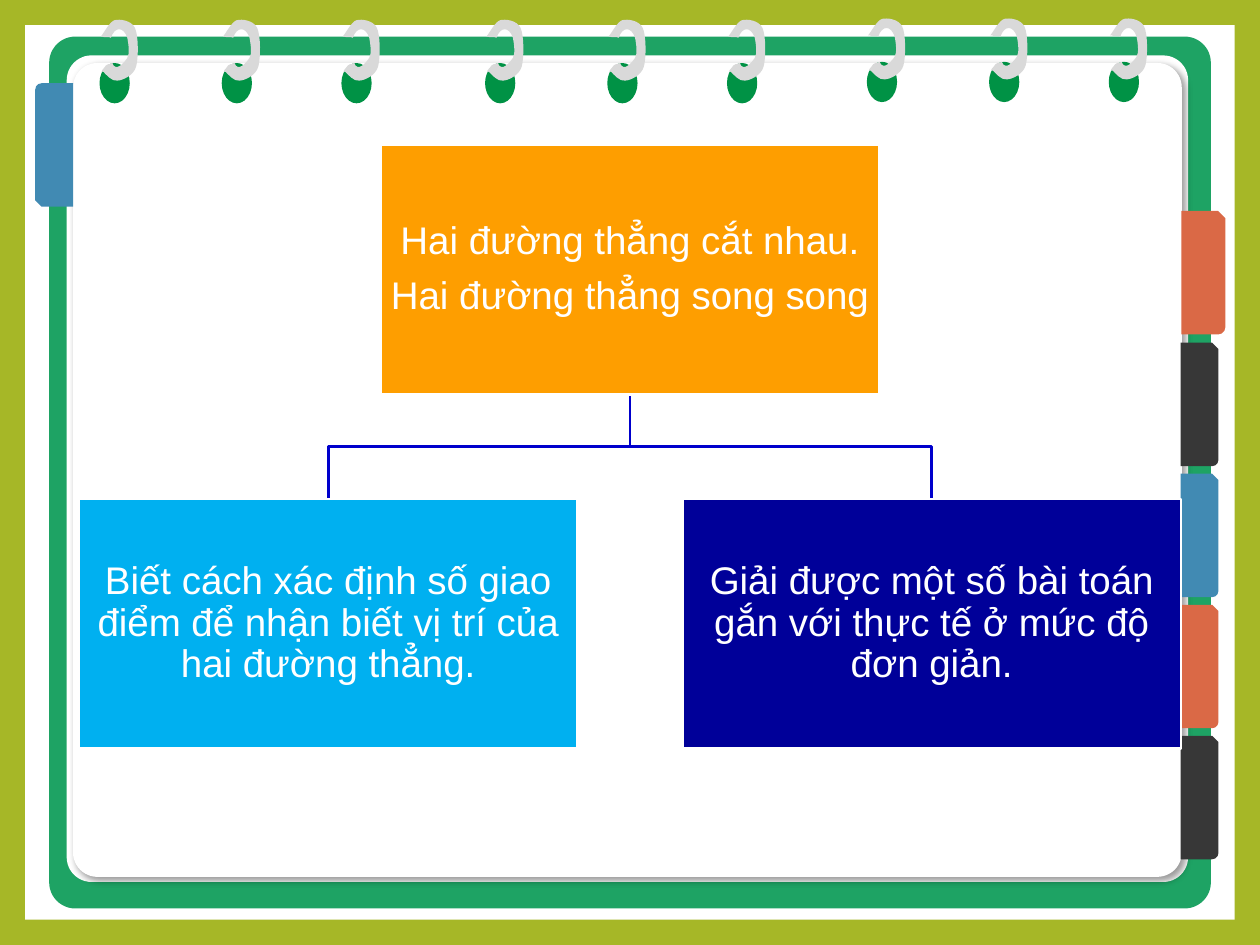
"""Build a notebook-style slide with a three-box hierarchy of lesson goals."""
from dataclasses import dataclass

from lxml.etree import SubElement
from pptx import Presentation
from pptx.dml.color import RGBColor
from pptx.enum.shapes import MSO_SHAPE
from pptx.enum.text import MSO_ANCHOR, PP_ALIGN
from pptx.oxml.ns import qn
from pptx.util import Inches, Pt


@dataclass(frozen=True)
class Theme:
    olive: str = "A6B727"
    white: str = "FFFFFF"
    cover: str = "1EA364"
    hole: str = "009245"
    ring: str = "D9D9D9"
    coral: str = "DA6946"
    charcoal: str = "373737"
    steel: str = "418AB3"
    link: str = "0000CC"
    orange: str = "FE9E00"
    sky: str = "00B0F0"
    navy: str = "000099"
    font: str = "Arial"
    body: Pt = Pt(22)
    line: Pt = Pt(1.5)


theme = Theme()
deck = Presentation()
deck.slide_width, deck.slide_height = Inches(10), Inches(7.5)
page = deck.slides.add_slide(deck.slide_layouts[6])
page.background.fill.solid()
page.background.fill.fore_color.rgb = RGBColor.from_string(theme.olive)


def add_filled(kind, left, top, width, height, color):
    shape = page.shapes.add_shape(kind, Inches(left), Inches(top), Inches(width), Inches(height))
    shape.shadow.inherit = False
    shape.fill.solid()
    shape.fill.fore_color.rgb = RGBColor.from_string(color)
    shape.line.fill.background()
    return shape


def add_outline(points, closed):
    corners = [(Inches(x), Inches(y)) for x, y in points]
    builder = page.shapes.build_freeform(*corners[0])
    builder.add_line_segments(corners[1:], close=closed)
    shape = builder.convert_to_shape()
    shape.shadow.inherit = False
    return shape


add_filled(MSO_SHAPE.RECTANGLE, 0.2, 0.2, 9.6, 7.1, theme.white)
for left, top, width, height, color in [
    (0.39, 0.29, 9.22, 6.92, theme.cover),
    (0.53, 0.44, 8.9, 6.56, theme.white),
    (0.58, 0.5, 8.8, 6.46, theme.white),
]:
    sheet = add_filled(MSO_SHAPE.ROUNDED_RECTANGLE, left, top, width, height, color)
    sheet.adjustments[0] = 0.03

effects = sheet._element.spPr.find(qn("a:effectLst"))
shadow = SubElement(effects, qn("a:outerShdw"), blurRad=str(Pt(4)), dist=str(Pt(3)),
                    dir="2700000", algn="tl", rotWithShape="0")
shade = SubElement(shadow, qn("a:srgbClr"), val="000000")
SubElement(shade, qn("a:alpha"), val="40000")

ring_start = (0.8, 0.29)
ring_curves = [
    ((0.82, 0.27), (0.87, 0.17), (0.91, 0.16)),
    ((0.95, 0.15), (1.04, 0.16), (1.07, 0.22)),
    ((1.1, 0.28), (1.1, 0.46), (1.08, 0.53)),
    ((1.06, 0.6), (0.97, 0.64), (0.93, 0.64)),
    ((0.89, 0.65), (0.84, 0.59), (0.82, 0.57)),
    ((0.78, 0.58), (0.83, 0.54), (0.84, 0.52)),
    ((0.85, 0.5), (0.86, 0.52), (0.89, 0.5)),
    ((0.92, 0.58), (0.99, 0.49), (1.01, 0.46)),
    ((1.03, 0.43), (1.02, 0.35), (1.01, 0.3)),
    ((0.98, 0.21), (0.91, 0.21), (0.88, 0.3)),
    ((0.87, 0.29), (0.82, 0.3), (0.81, 0.29)),
]
center_x, center_y = 0.94, 0.4
turned_curves = [[(center_x + y - center_y, center_y - x + center_x) for x, y in curve]
                 for curve in [(ring_start,), *ring_curves]]
ring_ends = [curve[-1] for curve in turned_curves]

for group_left, lift in [(0, 0), (3.06, 0), (6.09, 0.01)]:
    for offset in (0, 0.97, 1.92):
        shift = group_left + offset
        add_filled(MSO_SHAPE.FLOWCHART_CONNECTOR, 0.79 + shift, 0.5 - lift, 0.24, 0.32, theme.hole)
        ring = add_outline([(x + shift, y - lift) for x, y in ring_ends], True)
        ring.fill.solid()
        ring.fill.fore_color.rgb = RGBColor.from_string(theme.ring)
        ring.line.fill.background()
        ring.rotation = 90
        segments = list(ring._element.iter(qn("a:lnTo")))
        for segment, curve in zip(segments, turned_curves[1:]):
            segment.tag = qn("a:cubicBezTo")
            segment.remove(segment[0])
            for x, y in curve:
                SubElement(segment, qn("a:pt"), x=str(Inches(x + shift) - ring.left),
                           y=str(Inches(y - lift) - ring.top))

right_colors = [theme.coral, theme.charcoal, theme.steel, theme.coral, theme.charcoal]
tabs = [(9.03, 2.02 + 1.04 * row, 0.3, 270, color) for row, color in enumerate(right_colors)]
tabs[0] = (9.06, 1.99, 0.35, 270, theme.coral)
tabs.append((-0.06, 1, 0.3, 90, theme.steel))
for left, top, depth, turn, color in tabs:
    tab = add_filled(MSO_SHAPE.SNIP_ROUND_RECTANGLE, left, top, 0.98, depth, color)
    tab.rotation = turn
    tab._element.spPr.xfrm.set("flipV", "1")

box_width, box_height = 3.96, 1.98
root_top, child_top = 1.15, 3.96
root_bottom = root_top + box_height
middle = (root_bottom + child_top) / 2
child_pitch = 4.79
root_center = 5
left_center, right_center = root_center - child_pitch / 2, root_center + child_pitch / 2
for child_center in (right_center, left_center):
    link = add_outline([(root_center, root_bottom), (root_center, middle),
                        (child_center, middle), (child_center, child_top)], False)
    link.fill.background()
    link.line.color.rgb = RGBColor.from_string(theme.link)
    link.line.width = theme.line

for center, top, color, lines in [
    (root_center, root_top, theme.orange,
     ["Hai đường thẳng cắt nhau.", "Hai đường thẳng song song"]),
    (left_center, child_top, theme.sky,
     ["Biết cách xác định số giao điểm để nhận biết vị trí của hai đường thẳng."]),
    (right_center, child_top, theme.navy,
     ["Giải được một số bài toán gắn với thực tế ở mức độ đơn giản."]),
]:
    box = add_filled(MSO_SHAPE.RECTANGLE, center - box_width / 2, top, box_width, box_height, color)
    box.line.color.rgb = RGBColor.from_string(theme.white)
    box.line.width = theme.line
    frame = box.text_frame
    frame.word_wrap = True
    frame.vertical_anchor = MSO_ANCHOR.MIDDLE
    frame.margin_left = frame.margin_right = Inches(0.02)
    frame.margin_top = frame.margin_bottom = Inches(0.02)
    for index, line in enumerate(lines):
        para = frame.add_paragraph() if index else frame.paragraphs[0]
        para.alignment = PP_ALIGN.CENTER
        para.line_spacing = 0.9
        para.space_after = Pt(7.7)
        span = para.add_run()
        span.text = line
        span.font.name = theme.font
        span.font.size = theme.body
        span.font.color.rgb = RGBColor.from_string(theme.white)

deck.save("out.pptx")
